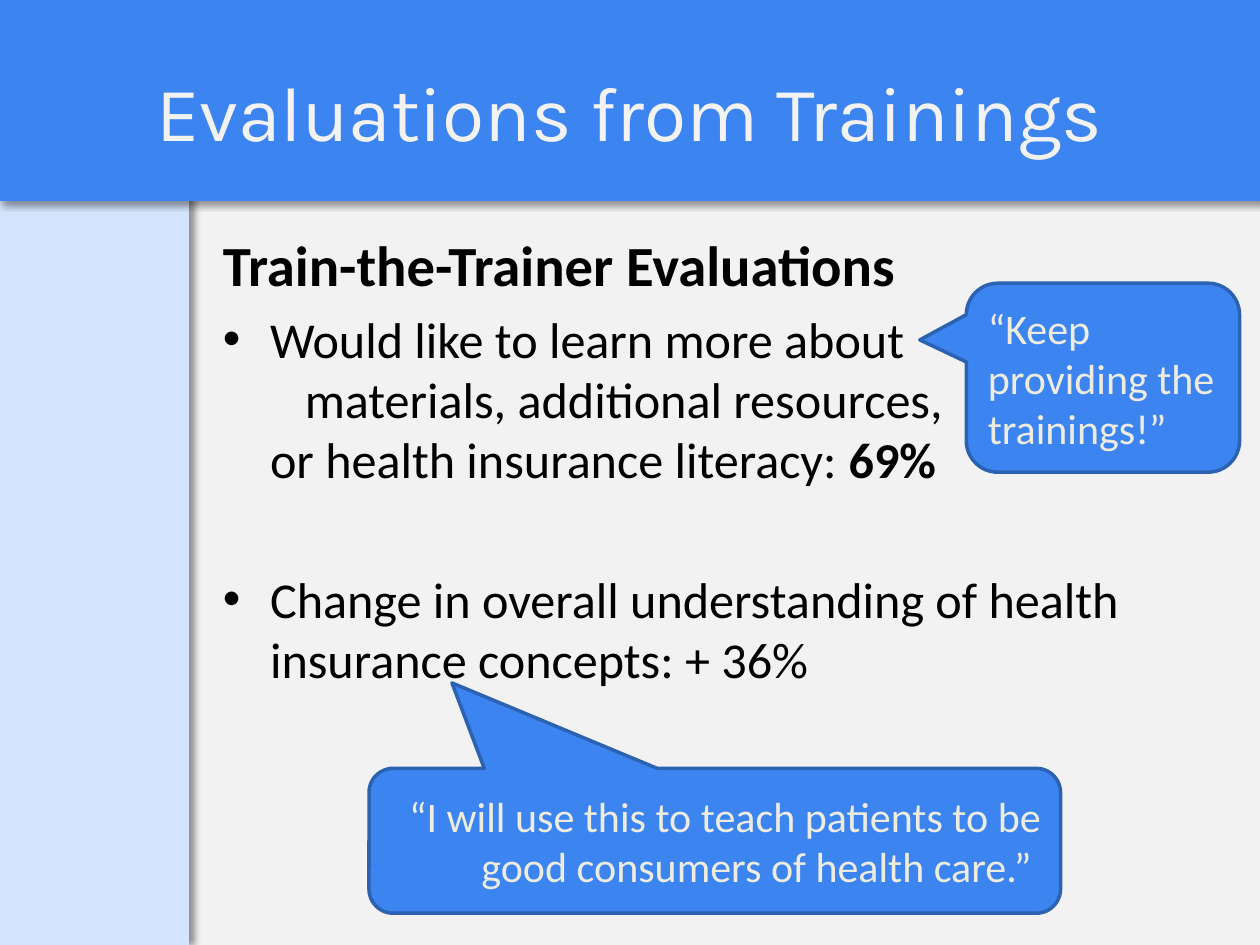
import pptx
import pptx.util
import pptx.dml.color
import pptx.enum.shapes
import pptx.enum.text
import pptx.oxml
import pptx.oxml.ns

Cm, Pt = pptx.util.Cm, pptx.util.Pt
Shape = pptx.enum.shapes.MSO_SHAPE
Align = pptx.enum.text.PP_ALIGN
Anchor = pptx.enum.text.MSO_ANCHOR
qn = pptx.oxml.ns.qn
NS = pptx.oxml.ns.nsdecls("a")

COLORS = {
    "back": "F2F2F2", "side": "D3E4FC", "blue": "3C85F0",
    "edge": "2C62B2", "ink": "000000", "cream": "EEECE1",
}


def rgb(name):
    return pptx.dml.color.RGBColor.from_string(COLORS[name])


def write(para, text, size=28.7, color="ink", font="Calibri", bold=False):
    """Add one formatted run to a paragraph."""
    run = para.add_run()
    run.text = text
    run.font.size, run.font.name, run.font.bold = Pt(size), font, bold
    run.font.color.rgb = rgb(color)


class Deck:
    def __init__(self):
        self.prs = pptx.Presentation()
        self.prs.slide_width, self.prs.slide_height = Cm(25.4), Cm(19.05)
        self.slide = self.prs.slides.add_slide(self.prs.slide_layouts[1])
        fill = self.slide.background.fill
        fill.solid()
        fill.fore_color.rgb = rgb("back")

    def shape(self, kind, box, fill, line=None):
        item = self.slide.shapes.add_shape(kind, *map(Cm, box))
        item.shadow.inherit = False
        item.fill.solid()
        item.fill.fore_color.rgb = rgb(fill)
        if line:
            item.line.color.rgb = rgb(line)
            item.line.width = Pt(2)
        else:
            item.line.fill.background()
        return item

    def panel(self, box, fill, line=None, angle=0):
        """Draw a shadowed rectangle behind the placeholders."""
        item = self.shape(Shape.RECTANGLE, box, fill, line)
        props = item._element.spPr
        props.remove(props.find(qn("a:effectLst")))
        props.append(pptx.oxml.parse_xml(
            f'<a:effectLst {NS}><a:outerShdw blurRad="{Pt(4)}" dist="{Pt(3)}" '
            f'dir="{angle * 60000}" algn="tl" rotWithShape="0">'
            '<a:srgbClr val="000000"><a:alpha val="40000"/></a:srgbClr>'
            '</a:outerShdw></a:effectLst>'))
        tree = self.slide.shapes._spTree
        tree.remove(item._element)
        tree.insert(2, item._element)

    def holder(self, index, box, anchor):
        item = self.slide.placeholders[index]
        item.left, item.top, item.width, item.height = map(Cm, box)
        frame = item.text_frame
        frame.word_wrap, frame.vertical_anchor = True, anchor
        frame.auto_size = pptx.enum.text.MSO_AUTO_SIZE.NONE
        return frame

    def title(self, text, box):
        para = self.holder(0, box, Anchor.MIDDLE).paragraphs[0]
        para.alignment = Align.CENTER
        write(para, text, size=44, color="back", font="Karla")

    def body(self, head, lines, box):
        frame = self.holder(1, box, Anchor.TOP)
        first = frame.paragraphs[0]
        self.indent(first, 0)
        first.space_before = Pt(0)
        write(first, head, size=32.4, bold=True)
        for text, strong, left, gap, dot in lines:
            para = frame.add_paragraph()
            self.indent(para, left, dot)
            para.space_before, para.line_spacing = Pt(gap), Pt(34.3)
            write(para, text)
            if strong:
                write(para, strong, bold=True)

    def indent(self, para, left, dot=False):
        props = para._p.get_or_add_pPr()
        props.set("marL", str(Cm(left)))
        props.set("indent", str(-Cm(left) if dot else 0))
        mark = f'<a:buChar {NS} char="•"/>' if dot else f'<a:buNone {NS}/>'
        props.append(pptx.oxml.parse_xml(mark))

    def callout(self, text, box, tip, align):
        item = self.shape(Shape.ROUNDED_RECTANGULAR_CALLOUT, box, "blue", "edge")
        for spot, value in enumerate(tip):
            item.adjustments[spot] = value
        frame = item.text_frame
        frame.word_wrap, frame.vertical_anchor = True, Anchor.MIDDLE
        frame.paragraphs[0].alignment = align
        write(frame.paragraphs[0], text, size=24, color="cream")


def main():
    deck = Deck()

    # Banner and sidebar; each new panel goes to the back
    deck.panel((0, 0, 25.4, 4.02), "blue", "blue", angle=45)
    deck.panel((0, 3.81, 3.81, 15.24), "side")

    # Title and findings: text, bold end, indent, gap above, bullet
    deck.title("Evaluations from Trainings", (1.27, 0.64, 22.86, 3.17))
    deck.body("Train-the-Trainer Evaluations", [
        ("Would like to learn more about", "", 0.95, 6, True),
        ("materials, additional resources,", "", 1.65, 0, False),
        ("or health insurance literacy: ", "69%", 0.95, 0, False),
        ("Change in overall understanding of health insurance concepts: + 36%",
         "", 0.95, 46, True),
    ], (4.24, 4.5, 20.75, 14.5))

    # Quotes
    deck.callout("“I will use this to teach patients to be good consumers "
                 "of health care.” ", (7.44, 15.49, 13.94, 2.92),
                 (-0.38, -1.09), Align.RIGHT)
    deck.callout("“Keep providing the trainings!”", (19.48, 5.71, 5.51, 3.81),
                 (-0.67, -0.2), Align.LEFT)

    deck.prs.save("out.pptx")


if __name__ == "__main__":
    main()
